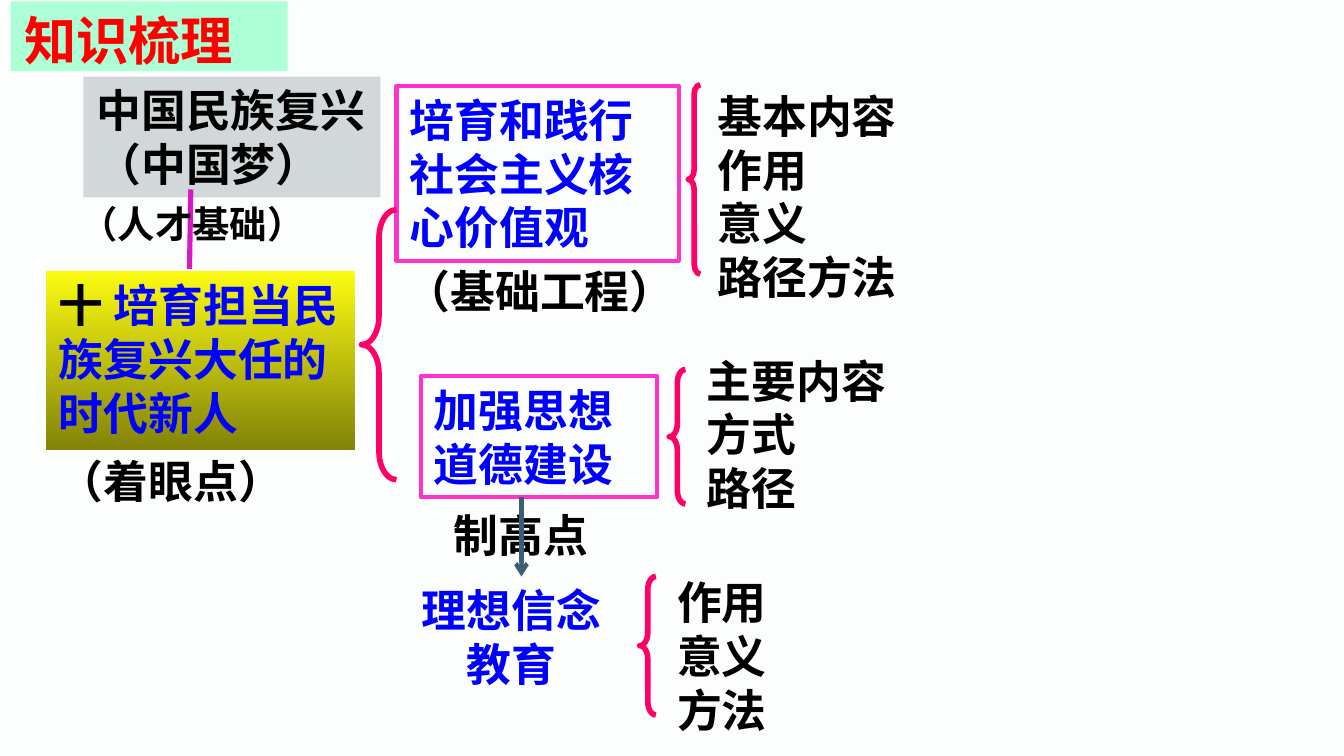
"""Build the knowledge outline slide on raising a new generation."""
from lxml import etree
from pptx import Presentation, util as u
from pptx.dml.color import RGBColor
from pptx.enum import shapes, text
from pptx.oxml import ns

CJK = "Noto Sans CJK SC"
TIMES = "Times New Roman"
BLACK, BLUE, PINK, ROSE = "000000", "0000FF", "FF33CC", "FF0066"

TITLE = dict(at=(0.08, 0.01, 2.06, 0.52), lines=["知识梳理"], color="FF0000",
             size=28, fill="ADFFD6", grow=False)
BOXES = [
    dict(at=(0.34, 2.02, 2.3, 1.33), lines=[[("十 ", BLACK), ("培育担当民族复兴大任的时代新人", BLUE)]],
         gradient=("FBFB11", "838309")),
    dict(at=(2.95, 0.64, 2.1, 1.3), lines=["培育和践行社会主义核心价值观"],
         font=TIMES, color=BLUE, line=PINK),
    dict(at=(3.13, 2.8, 1.76, 0.9), lines=["加强思想道德建设"], font=CJK, color=BLUE, line=PINK),
    dict(at=(0.34, 3.33, 2.43, 0.5), lines=["（着眼点）"], font=CJK),
    dict(at=(2.92, 1.91, 2.32, 0.5), lines=["（基础工程）"], font=CJK),
    dict(at=(2.97, 4.29, 1.67, 0.9), lines=["理想信念教育"], font=TIMES, color=BLUE,
         align=text.PP_ALIGN.CENTER),
    dict(at=(3.28, 3.73, 1.37, 0.5), lines=["制高点"], font=CJK),
    dict(at=(5.24, 0.61, 2.05, 1.73), lines=["基本内容", "作用", "意义", "路径方法"]),
    dict(at=(4.94, 4.23, 1.62, 1.33), lines=["作用", "意义", "方法"]),
    dict(at=(5.16, 2.58, 2.05, 1.33), lines=["主要内容", "方式", "路径"]),
    dict(at=(0.62, 0.57, 2.21, 0.9), lines=["中国民族复兴", "（中国梦）"], font=TIMES,
         fill="D2D7D9", wrap=False),
]
TALENT_LABEL = dict(at=(0.5, 1.45, 1.97, 0.43), lines=["（人才基础）"], font=CJK, size=20)
BRACES = [(2.69, 1.56, 0.26, 2.01), (5.12, 0.63, 0.09, 1.41),
          (4.76, 4.29, 0.12, 1.03), (4.98, 2.75, 0.12, 1)]
LINES = [
    dict(ends=(3.88, 3.7, 3.88, 4.29), color="3E5C74", width=2.25, arrow=True),
    dict(ends=(1.42, 1.41, 1.41, 2), color="D818C4", width=2.75, arrow=False),
]


def inches(values):
    """Turn numbers into lengths."""
    return [u.Inches(value) for value in values]


def paint(color, value):
    """Set a colour from a hex string."""
    color.rgb = RGBColor.from_string(value)


def outline(shape, color, width):
    """Give a shape a solid line."""
    paint(shape.line.color, color)
    shape.line.width = u.Pt(width)


def write(box, item):
    """Fill a box with its formatted paragraphs."""
    frame = box.text_frame
    fit = text.MSO_AUTO_SIZE
    settings = dict(word_wrap=item.get("wrap", True), vertical_anchor=text.MSO_ANCHOR.TOP,
                    auto_size=fit.SHAPE_TO_FIT_TEXT if item.get("grow", True) else fit.NONE)
    for name, value in settings.items():
        setattr(frame, name, value)
    for index, line in enumerate(item["lines"]):
        para = frame.add_paragraph() if index else frame.paragraphs[0]
        para.alignment = item.get("align", text.PP_ALIGN.LEFT)
        spans = [(line, item.get("color", BLACK))] if isinstance(line, str) else line
        for wording, color in spans:
            span = para.add_run()
            span.text = wording
            style = dict(size=u.Pt(item.get("size", 24)), bold=True, name=item.get("font", "Arial"))
            for name, value in style.items():
                setattr(span.font, name, value)
            paint(span.font.color, color)
            etree.SubElement(span.font._element, ns.qn("a:ea"), typeface=CJK)


def decorate(box, item):
    """Apply the fill and line of a box."""
    if "gradient" in item:
        box.fill.gradient()
        box.fill.gradient_angle = 270
        for stop, color in zip(box.fill.gradient_stops, item["gradient"]):
            paint(stop.color, color)
    elif "fill" in item:
        box.fill.solid()
        paint(box.fill.fore_color, item["fill"])
    if "line" in item:
        outline(box, item["line"], 2.25)


def add_box(slide, item):
    """Add one text box."""
    box = slide.shapes.add_textbox(*inches(item["at"]))
    decorate(box, item)
    write(box, item)


def add_title(slide, item):
    """Place and format the title."""
    title = slide.shapes.title
    for name, value in zip(("left", "top", "width", "height"), inches(item["at"])):
        setattr(title, name, value)
    decorate(title, item)
    write(title, item)


def add_brace(slide, at):
    """Add one left brace."""
    brace = slide.shapes.add_shape(shapes.MSO_SHAPE.LEFT_BRACE, *inches(at))
    brace.shadow.inherit = False
    brace.fill.background()
    brace.adjustments[0] = 0.813
    outline(brace, ROSE, 3)


def add_line(slide, item):
    """Add one straight line, with an arrowhead if asked."""
    line = slide.shapes.add_connector(shapes.MSO_CONNECTOR.STRAIGHT, *inches(item["ends"]))
    outline(line, item["color"], item["width"])
    if item["arrow"]:
        etree.SubElement(line.line._get_or_add_ln(), ns.qn("a:tailEnd"), type="arrow")
    etree.SubElement(line._element.spPr, ns.qn("a:effectLst"))


def main():
    """Build and save the deck."""
    deck = Presentation()
    deck.slide_width = u.Inches(10)
    deck.slide_height = deck.slide_width * 9 // 16
    slide = deck.slides.add_slide(deck.slide_layouts[5])
    slide.background.fill.solid()
    paint(slide.background.fill.fore_color, "FCFDFD")
    add_title(slide, TITLE)
    for item in BOXES:
        add_box(slide, item)
    for at in BRACES:
        add_brace(slide, at)
    for item in LINES:
        add_line(slide, item)
    add_box(slide, TALENT_LABEL)
    deck.save("out.pptx")


if __name__ == "__main__":
    main()
